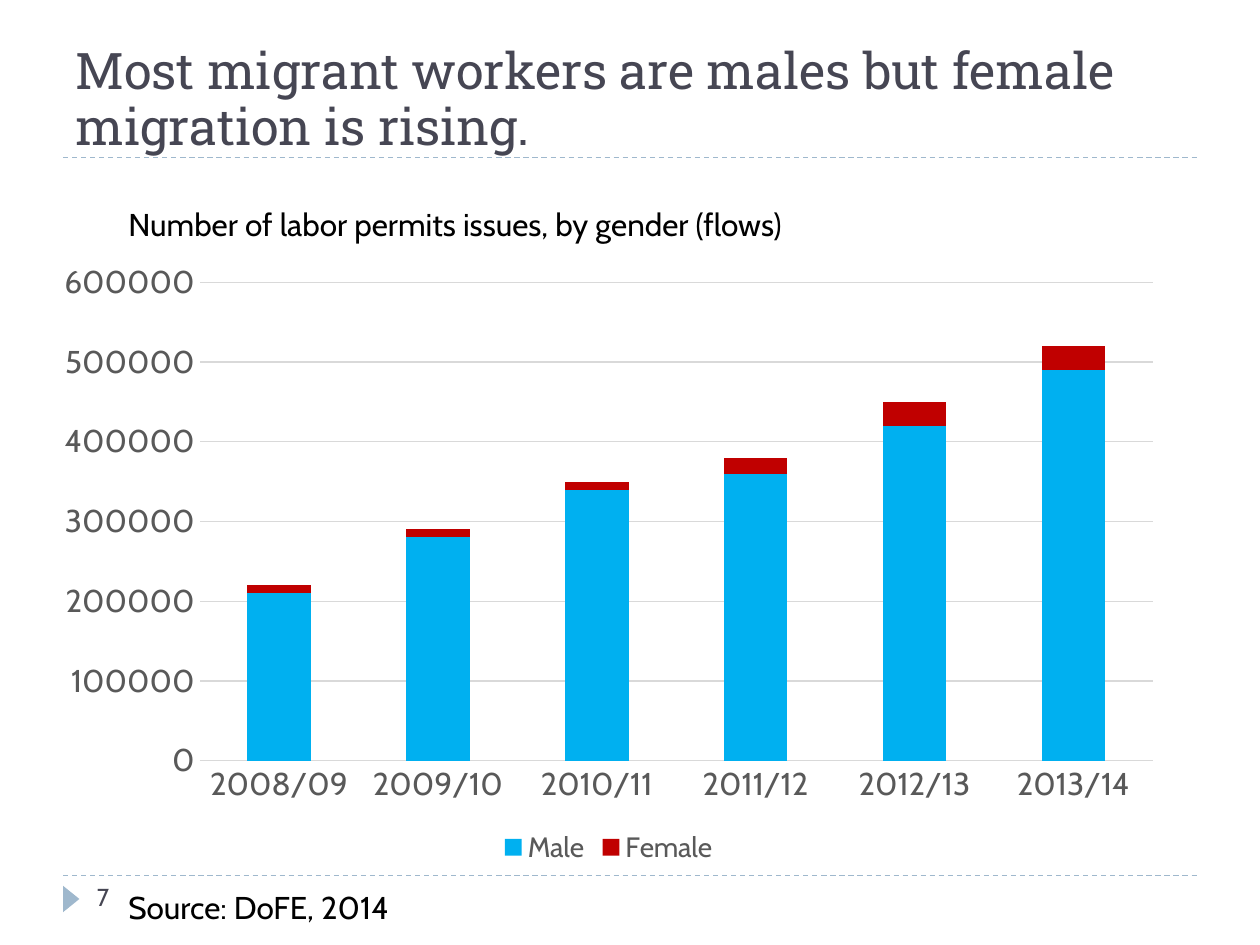
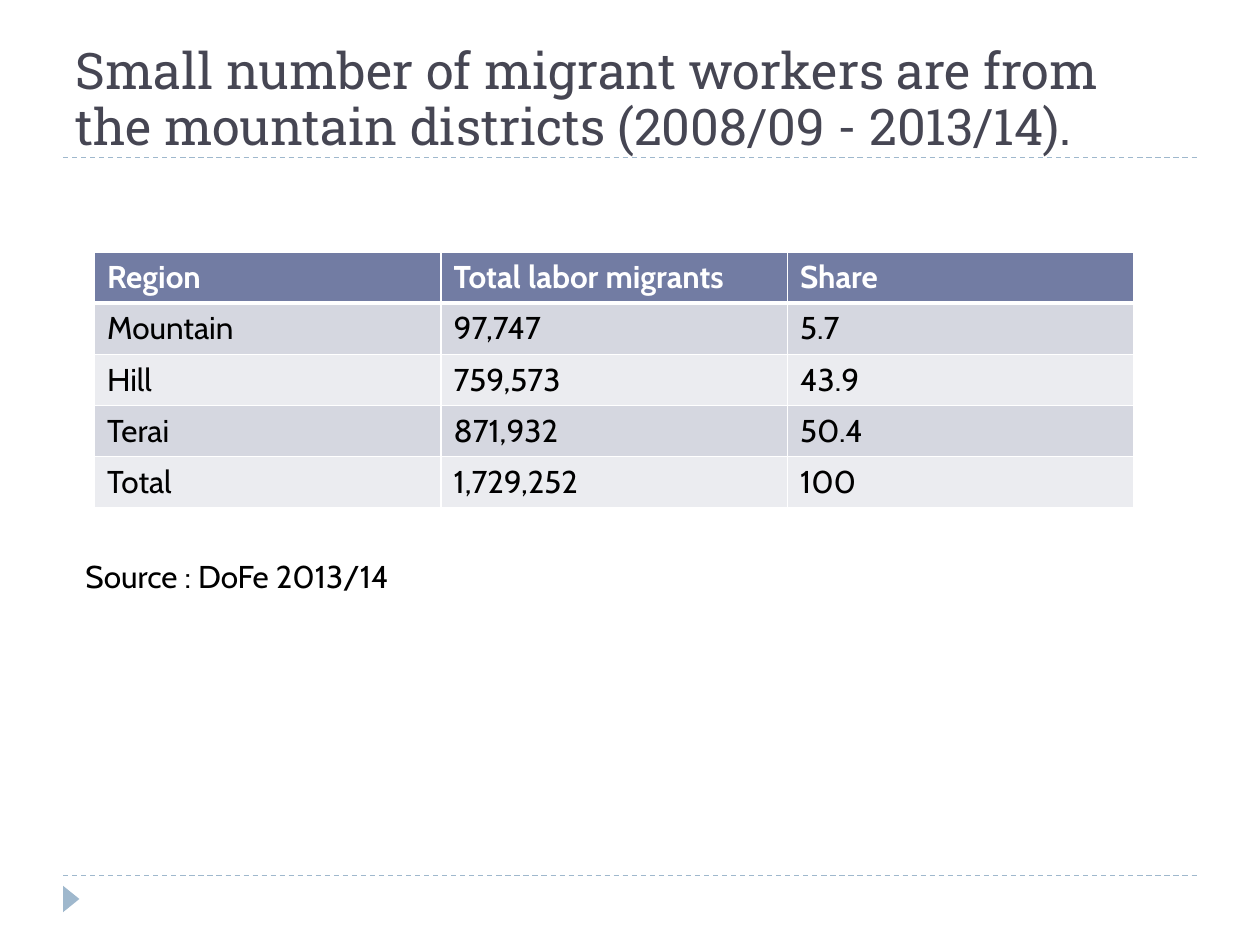
import pptx
import pptx.util
import pptx.chart.data
import pptx.dml.color
import pptx.enum.chart
import pptx.enum.dml
import pptx.enum.shapes
import pptx.enum.text
import pptx.oxml
import pptx.oxml.ns
from lxml import etree

WIDE, HIGH = 10, 7.5
EDGE = 0.05 * WIDE
SPAN = WIDE - 2 * EDGE
RULES = (1.25, 6.95)
HEAD, BODY = "Roboto Slab", "Cabin"
INK, PALE, GRAY, GRID = "464653", "9FB8CD", "595959", "D9D9D9"
BLACK, WHITE = "000000", "FFFFFF"
BANDS = ("D5D7E0", "EBECF0")
TOP = "727CA3"

GENDER = {
    "title": "Most migrant workers are males but female migration is rising.",
    "notes": [
        ("7", (0.67, 6.95, 2.17, 0.4), 14, INK),
        ("Source: DoFE, 2014", (0.92, 7, 8.83, 0.4), 18, BLACK),
        ("Number of labor permits issues, by gender (flows)",
         (0.92, 1.58, 5.58, 0.4), 18, BLACK),
    ],
    "years": ["2008/09", "2009/10", "2010/11", "2011/12", "2012/13", "2013/14"],
    "bars": [
        ("Male", (210000, 280000, 340000, 360000, 420000, 490000), "00B0F0"),
        ("Female", (10000, 10000, 10000, 20000, 30000, 30000), "C00000"),
    ],
}
REGION = {
    "title": "Small number of migrant workers are from the mountain districts "
             "(2008/09 - 2013/14).",
    "notes": [
        ("Source : DoFe 2013/14", (0.58, 4.37, 8.92, 0.71), 18, BLACK),
    ],
    "rows": [
        ("Region", "Total labor migrants", "Share"),
        ("Mountain", "97,747", "5.7"),
        ("Hill", "759,573", "43.9"),
        ("Terai", "871,932", "50.4"),
        ("Total", "1,729,252", "100"),
    ],
}


def tint(code):
    return pptx.dml.color.RGBColor.from_string(code)


def box(*sides):
    return [pptx.util.Inches(side) for side in sides]


def style(font, size, code, face=BODY, bold=False):
    font.name = face
    font.size = pptx.util.Pt(size)
    font.bold = bold
    font.color.rgb = tint(code)


def paint(fill, code):
    fill.solid()
    fill.fore_color.rgb = tint(code)


def stroke(line, code):
    line.color.rgb = tint(code)
    line.width = pptx.util.Pt(0.75)


def add_rule(slide, y):
    rule = slide.shapes.add_connector(
        pptx.enum.shapes.MSO_CONNECTOR.STRAIGHT, *box(EDGE, y, EDGE + SPAN, y))
    stroke(rule.line, PALE)
    rule.line.dash_style = pptx.enum.dml.MSO_LINE.DASH
    etree.SubElement(rule._element.spPr, pptx.oxml.ns.qn("a:effectLst"))


def add_mark(slide):
    mark = slide.shapes.add_shape(
        pptx.enum.shapes.MSO_SHAPE.ISOSCELES_TRIANGLE, *box(0.46, 7.07, 0.21, 0.13))
    mark.rotation = 90
    mark.shadow.inherit = False
    paint(mark.fill, PALE)
    mark.line.fill.background()


def set_title(slide, text):
    title = slide.shapes.title
    title.left, title.top, title.width, title.height = box(EDGE, 0.17, SPAN, 1.08)
    frame = title.text_frame
    frame.text = text
    frame.auto_size = pptx.enum.text.MSO_AUTO_SIZE.NONE
    frame.vertical_anchor = pptx.enum.text.MSO_ANCHOR.BOTTOM
    frame.margin_bottom = pptx.util.Inches(0.01)
    line = frame.paragraphs[0]
    line.alignment = pptx.enum.text.PP_ALIGN.LEFT
    line.line_spacing = 0.92
    style(line.font, 28.8, INK, HEAD)


def add_note(slide, text, place, size, code):
    frame = slide.shapes.add_textbox(*box(*place)).text_frame
    frame.word_wrap = True
    frame.text = text
    style(frame.paragraphs[0].font, size, code)


def add_page(deck, page):
    slide = deck.slides.add_slide(deck.slide_layouts[5])
    for y in RULES:
        add_rule(slide, y)
    add_mark(slide)
    set_title(slide, page["title"])
    for note in page["notes"]:
        add_note(slide, *note)
    return slide


def add_bars(slide, years, bars):
    data = pptx.chart.data.CategoryChartData(number_format="General")
    data.categories = years
    for name, vals, code in bars:
        data.add_series(name, vals)
    chart = slide.shapes.add_chart(
        pptx.enum.chart.XL_CHART_TYPE.COLUMN_STACKED,
        *box(0.33, 1.99, SPAN, 4.91), data).chart
    chart.has_title = False
    style(chart.font, 10, BLACK)
    plot = chart.plots[0]
    plot.gap_width, plot.overlap = 150, 100
    plot.vary_by_categories = False
    for run, (name, vals, code) in zip(plot.series, bars):
        paint(run.format.fill, code)
    for axis in (chart.category_axis, chart.value_axis):
        axis.major_tick_mark = pptx.enum.chart.XL_TICK_MARK.NONE
        axis.minor_tick_mark = pptx.enum.chart.XL_TICK_MARK.NONE
        style(axis.tick_labels.font, 18, GRAY)
    stroke(chart.category_axis.format.line, GRID)
    chart.value_axis.format.line.fill.background()
    stroke(chart.value_axis.major_gridlines.format.line, GRID)
    chart.value_axis.minimum_scale = 0
    chart.value_axis.maximum_scale = 600000
    chart.value_axis.major_unit = 100000
    chart.has_legend = True
    chart.legend.position = pptx.enum.chart.XL_LEGEND_POSITION.BOTTOM
    chart.legend.include_in_layout = False
    style(chart.legend.font, 16, GRAY)


def add_edges(cell, row):
    thick = {"T": 3 if row == 1 else 1, "B": 3 if row == 0 else 1}
    props = cell._tc.get_or_add_tcPr()
    for side in "LRTB":
        edge = etree.SubElement(props, pptx.oxml.ns.qn("a:ln" + side))
        edge.set("w", str(pptx.util.Pt(thick.get(side, 1))))
        fill = etree.SubElement(edge, pptx.oxml.ns.qn("a:solidFill"))
        etree.SubElement(fill, pptx.oxml.ns.qn("a:srgbClr")).set("val", WHITE)


def add_grid(slide, rows):
    table = slide.shapes.add_table(
        len(rows), len(rows[0]), *box(0.75, 2, 8.25, 2.03)).table
    for r, row in enumerate(rows):
        head = r == 0
        for c, text in enumerate(row):
            cell = table.cell(r, c)
            cell.text = text
            add_edges(cell, r)
            paint(cell.fill, TOP if head else BANDS[(r - 1) % 2])
            style(cell.text_frame.paragraphs[0].font, 18,
                  WHITE if head else BLACK, bold=head)


def main():
    deck = pptx.Presentation()
    deck.slide_width, deck.slide_height = box(WIDE, HIGH)
    add_bars(add_page(deck, GENDER), GENDER["years"], GENDER["bars"])
    add_grid(add_page(deck, REGION), REGION["rows"])
    deck.save("out.pptx")


if __name__ == "__main__":
    main()
